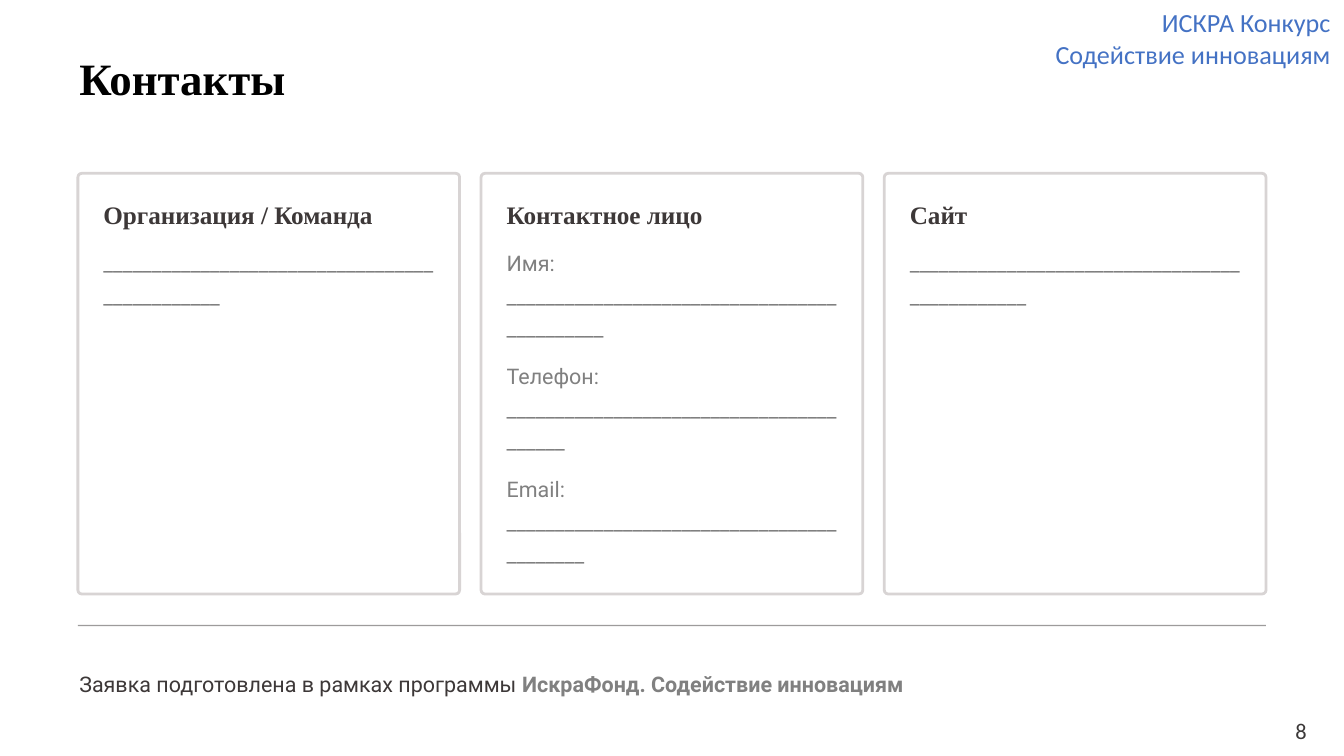
from lxml.etree import SubElement
from pptx import Presentation
from pptx.dml.color import RGBColor
from pptx.enum.shapes import MSO_SHAPE as Shape
from pptx.enum.text import MSO_AUTO_SIZE as AutoSize, PP_ALIGN as Align
from pptx.oxml.ns import qn
from pptx.util import Inches, Pt

COLORS = {
    "white": "FFFFFF",
    "black": "000000",
    "accent": "4472C4",
    "border": "D8D4D4",
    "dark": "3D3838",
    "muted": "808080",
    "number": "3B3838",
}
SERIF, SANS, OFFICE = "Times New Roman", "Roboto", "Calibri"
CARD_LEFT, CARD_TOP, CARD_STEP = 0.58, 1.29, 3
CARD_WIDTH, CARD_HEIGHT, CARD_PADDING = 2.84, 3.13, 0.19
FIELD_TOP, FIELD_STEP = 1.81, 0.84
CARDS = [
    ("Организация / Команда", [("", 46)]),
    ("Контактное лицо", [("Имя: ", 44), ("Телефон: ", 40), ("Email: ", 42)]),
    ("Сайт", [("", 46)]),
]


def rgb(name):
    return RGBColor.from_string(COLORS[name])


def add_text(slide, box, lines, font, size, color, bold=False, spacing=None,
             wrap=False, inset=0, align=Align.LEFT):
    frame = slide.shapes.add_textbox(*map(Inches, box)).text_frame
    frame.auto_size = None
    frame.word_wrap = wrap
    if inset is not None:
        frame.margin_left = frame.margin_right = Inches(inset)
        frame.margin_top = frame.margin_bottom = Inches(inset)
    for index, line in enumerate(lines):
        paragraph = frame.add_paragraph() if index else frame.paragraphs[0]
        paragraph.alignment = align
        if spacing:
            paragraph.line_spacing = Pt(spacing)
        paragraph.font.name = font
        paragraph.font.size = Pt(size)
        paragraph.font.bold = bold
        paragraph.font.color.rgb = rgb(color)
        paragraph.add_run().text = line
    return frame


def add_panel(slide, kind, box, fill):
    panel = slide.shapes.add_shape(kind, *map(Inches, box))
    panel.shadow.inherit = False
    panel.fill.solid()
    panel.fill.fore_color.rgb = rgb(fill)
    panel.line.fill.background()
    return panel


def add_card(slide, left, heading, fields):
    card = add_panel(slide, Shape.ROUNDED_RECTANGLE,
                     (left, CARD_TOP, CARD_WIDTH, CARD_HEIGHT), "white")
    card.adjustments[0] = 0.01
    card.line.color.rgb = rgb("border")
    card.line.width = Pt(1.5)

    text_left = left + CARD_PADDING
    text_width = CARD_WIDTH - 2 * CARD_PADDING
    add_text(slide, (text_left, CARD_TOP + CARD_PADDING, 1.89, 0.24), [heading],
             SERIF, 13.5, "dark", bold=True, spacing=16.5)
    for row, (label, blanks) in enumerate(fields):
        height = 0.74 if label else 0.49
        add_text(slide, (text_left, FIELD_TOP + row * FIELD_STEP, text_width, height),
                 [label + "_" * blanks], SANS, 11.5, "muted", spacing=17.5, wrap=True)


def add_divider(slide):
    divider = add_panel(slide, Shape.RECTANGLE, (CARD_LEFT, 4.65, 8.84, 0.01), "dark")
    tint = next(divider.element.spPr.iter(qn("a:srgbClr")))
    SubElement(tint, qn("a:alpha")).set("val", "50000")


def add_footer(slide):
    footer = add_text(slide, (0.59, 4.94, 8.84, 0.25),
                      ["Заявка подготовлена в рамках программы "],
                      SANS, 11.5, "dark", spacing=17.5)
    program = footer.paragraphs[0].add_run()
    program.text = "ИскраФонд. Содействие инновациям"
    program.font.bold = True
    program.font.color.rgb = rgb("muted")


def main():
    deck = Presentation()
    deck.slide_width = Inches(10)
    deck.slide_height = deck.slide_width * 9 // 16
    slide = deck.slides.add_slide(deck.slide_layouts[6])
    slide.background.fill.solid()
    slide.background.fill.fore_color.rgb = rgb("white")

    contest = add_text(slide, (7.73, 0, 2.27, 0.57),
                       ["ИСКРА Конкурс", "Содействие инновациям"],
                       OFFICE, 14, "accent", inset=None, align=Align.RIGHT)
    contest.auto_size = AutoSize.SHAPE_TO_FIT_TEXT
    for column, (heading, fields) in enumerate(CARDS):
        add_card(slide, CARD_LEFT + column * CARD_STEP, heading, fields)
    add_divider(slide)
    add_footer(slide)
    add_text(slide, (0.59, 0.31, 3.64, 0.46), ["Контакты"],
             SERIF, 24, "black", bold=True, spacing=33.5)
    add_text(slide, (9.54, 5.29, 0.54, 0.45), ["8"],
             OFFICE, 12, "number", wrap=True, inset=None)
    deck.save("out.pptx")


if __name__ == "__main__":
    main()
